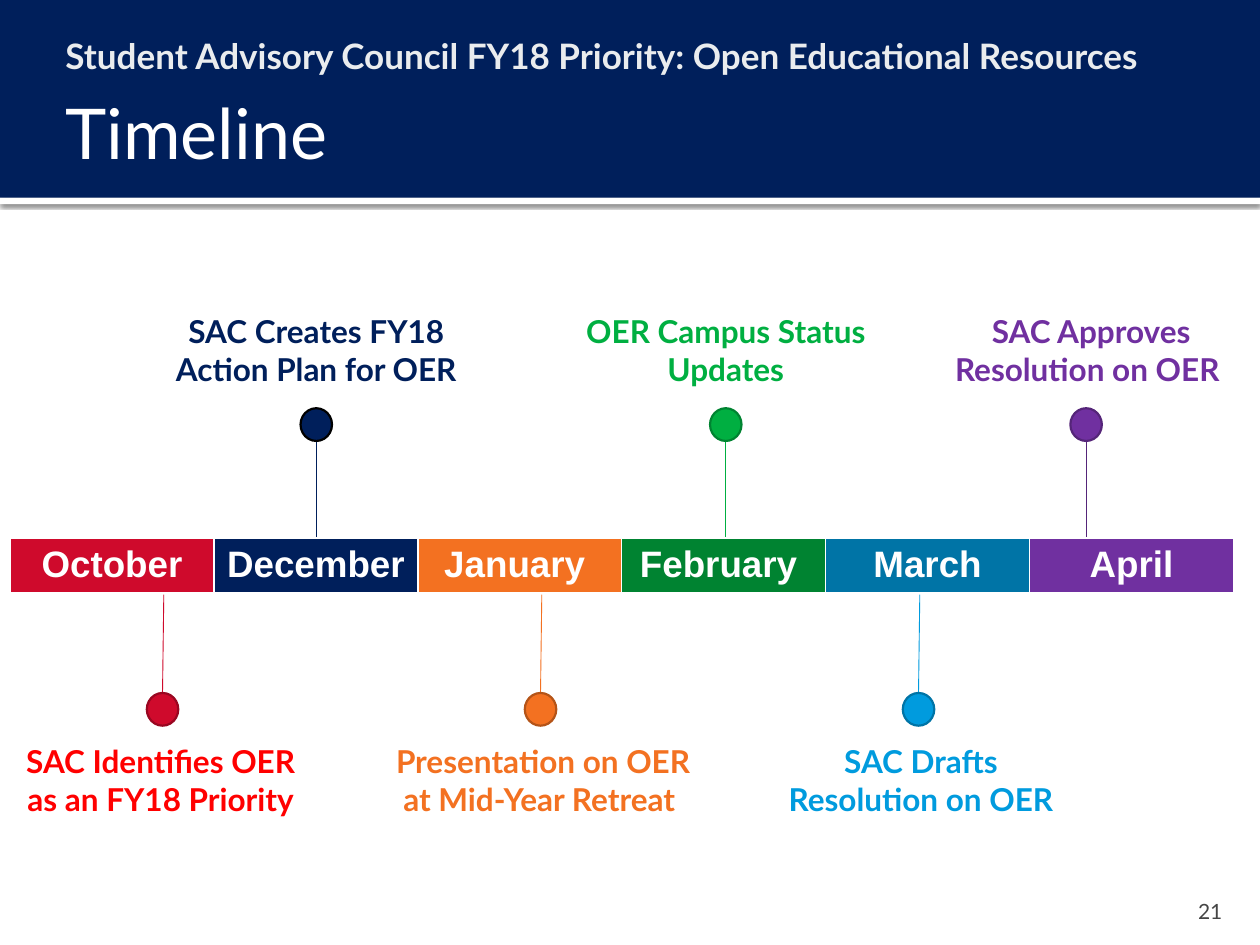
from lxml import etree
from pptx import Presentation
from pptx.dml.color import RGBColor
from pptx.enum.shapes import MSO_CONNECTOR, MSO_SHAPE
from pptx.enum.text import MSO_ANCHOR, MSO_AUTO_SIZE, PP_ALIGN
from pptx.oxml import parse_xml
from pptx.oxml.ns import nsdecls, qn
from pptx.util import Inches, Pt

RECT, OVAL = MSO_SHAPE.RECTANGLE, MSO_SHAPE.OVAL
STRAIGHT = MSO_CONNECTOR.STRAIGHT
LEFT, CENTER, RIGHT = PP_ALIGN.LEFT, PP_ALIGN.CENTER, PP_ALIGN.RIGHT
TOP, MIDDLE, BOTTOM = MSO_ANCHOR.TOP, MSO_ANCHOR.MIDDLE, MSO_ANCHOR.BOTTOM
NO_FIT = MSO_AUTO_SIZE.NONE

WHITE = RGBColor(0xFF, 0xFF, 0xFF)
BLACK = RGBColor(0x00, 0x00, 0x00)
PALE = RGBColor(0xEA, 0xEC, 0xEE)
GRAY = RGBColor(0x45, 0x45, 0x45)
NAVY = RGBColor(0x00, 0x1F, 0x5B)
RED = RGBColor(0xFF, 0x00, 0x00)
CRIMSON = RGBColor(0xCF, 0x0A, 0x2C)
DARK_CRIMSON = RGBColor(0x99, 0x07, 0x21)
ORANGE = RGBColor(0xF3, 0x71, 0x21)
DARK_ORANGE = RGBColor(0xB4, 0x54, 0x18)
GREEN = RGBColor(0x00, 0xAF, 0x41)
DARK_GREEN = RGBColor(0x00, 0x83, 0x31)
BLUE = RGBColor(0x00, 0x9B, 0xDE)
DARK_BLUE = RGBColor(0x00, 0x74, 0xA6)
PURPLE = RGBColor(0x70, 0x30, 0xA0)
DARK_PURPLE = RGBColor(0x55, 0x25, 0x79)

DOT_W, DOT_H = 0.25, 0.26
LABEL_H = 0.71
MONTHS = [("October", CRIMSON), ("December", NAVY), ("January ", ORANGE),
          ("February ", DARK_GREEN), ("March", DARK_BLUE), ("April", PURPLE)]
EVENTS_ABOVE = [
    ("SAC Creates FY18 Action Plan for OER", 2.51, 1.17, NAVY, NAVY, BLACK, NAVY),
    ("OER Campus Status Updates", 5.76, 4.42, GREEN, GREEN, DARK_GREEN, GREEN),
    ("SAC Approves Resolution on OER ", 8.62, 7.32, PURPLE, PURPLE, DARK_PURPLE,
     DARK_PURPLE),
]
EVENTS_BELOW = [
    ("SAC Identifies OER as an FY18 Priority", 1.3, 0, 2.55, RED, CRIMSON,
     DARK_CRIMSON, CRIMSON),
    ("Presentation on OER at Mid-Year Retreat ", 4.3, 2.95, 2.72, ORANGE, ORANGE,
     DARK_ORANGE, ORANGE),
    ("SAC Drafts Resolution on OER", 7.3, 6.08, 2.46, BLUE, BLUE, DARK_BLUE, BLUE),
]


def set_text(tf, text, size, color, align, bold=False, font="Lato"):
    p = tf.paragraphs[0]
    p.alignment = align
    r = p.add_run()
    r.text = text
    r.font.name, r.font.size, r.font.bold = font, Pt(size), bold
    r.font.color.rgb = color
    return p


def add_label(s, x, y, w, h, text, size, color, align, bold=False, anchor=TOP):
    tf = s.shapes.add_textbox(Inches(x), Inches(y), Inches(w), Inches(h)).text_frame
    tf.word_wrap = True
    tf.vertical_anchor = anchor
    set_text(tf, text, size, color, align, bold)


def add_filled(s, kind, x, y, w, h, fill, outline=None):
    sp = s.shapes.add_shape(kind, Inches(x), Inches(y), Inches(w), Inches(h))
    sp.shadow.inherit = False
    sp.fill.solid()
    sp.fill.fore_color.rgb = fill
    if outline is None:
        sp.line.fill.background()
    else:
        sp.line.color.rgb = outline
        sp.line.width = Pt(1.25)
    return sp


def format_placeholder(ph, x, y, w, h, insets, anchor):
    ph.left, ph.top, ph.width, ph.height = (Inches(v) for v in (x, y, w, h))
    tf = ph.text_frame
    tf.auto_size = NO_FIT
    tf.word_wrap = True
    tf.vertical_anchor = anchor
    tf.margin_left, tf.margin_top, tf.margin_right, tf.margin_bottom = (
        Inches(v) for v in insets)
    return tf


def add_header(s, w, h):
    strip = add_filled(s, RECT, 0, h, w, 0.05, WHITE)
    effects = strip._element.spPr.find(qn("a:effectLst"))
    effects.append(parse_xml(
        f'<a:outerShdw {nsdecls("a")} blurRad="{Pt(2.5)}" dist="{Pt(0.8)}" dir="5400000">'
        '<a:srgbClr val="000000"><a:alpha val="60000"/></a:srgbClr></a:outerShdw>'))
    band = add_filled(s, RECT, 0, 0, w, h, NAVY)
    for i, sp in enumerate((strip, band)):
        s.shapes._spTree.insert(2 + i, sp._element)

    tf = format_placeholder(s.placeholders[1], 0.33, 0.17, 9.34, 0.5,
                            (0.06, 0.1, 0.1, 0.05), TOP)
    p = set_text(tf, "Student Advisory Council FY18 Priority: Open Educational Resources",
                 20, PALE, LEFT, True)
    p.space_before = Pt(0)
    pPr = p._p.get_or_add_pPr()
    pPr.set("marL", str(Inches(0.13)))
    pPr.set("indent", "0")
    etree.SubElement(pPr, qn("a:buNone"))

    tf = format_placeholder(s.shapes.title, 0.42, 0.58, 9.17, 0.92,
                            (0.1, 0.05, 0.05, 0.05), MIDDLE)
    set_text(tf, "Timeline", 40, WHITE, LEFT)


def set_borders(cell):
    tcPr = cell._tc.get_or_add_tcPr()
    for i, (side, width) in enumerate((("L", 1), ("R", 1), ("T", 1), ("B", 3))):
        tcPr.insert(i, parse_xml(
            f'<a:ln{side} {nsdecls("a")} w="{Pt(width)}"><a:solidFill>'
            f'<a:srgbClr val="{WHITE}"/></a:solidFill></a:ln{side}>'))


def add_months(s, x, y, w, h):
    table = s.shapes.add_table(1, len(MONTHS), Inches(x), Inches(y),
                               Inches(w), Inches(h)).table
    table.horz_banding = False
    for cell, (month, color) in zip(table.rows[0].cells, MONTHS):
        cell.fill.solid()
        cell.fill.fore_color.rgb = color
        set_borders(cell)
        set_text(cell.text_frame, month, 21, WHITE, CENTER, True, "Arial")


def add_marker(s, x, bar_y, dot_y, stem_y, fill, outline, stem, lean=0):
    c = s.shapes.add_connector(STRAIGHT, Inches(x), Inches(bar_y),
                               Inches(x - lean), Inches(stem_y))
    c.line.color.rgb = stem
    c.line.width = Pt(0.5)
    etree.SubElement(c._element.spPr, qn("a:effectLst"))
    add_filled(s, OVAL, x - lean - DOT_W / 2, dot_y, DOT_W, DOT_H, fill, outline)


def add_events_above(s, y, bar_y):
    dot_y = y + 0.81
    for text, x, label_x, color, fill, outline, stem in EVENTS_ABOVE:
        add_marker(s, x, bar_y, dot_y, dot_y + DOT_H, fill, outline, stem)
        add_label(s, label_x, y, 2.68, LABEL_H, text, 18, color, CENTER, True)


def add_events_below(s, y, bar_y):
    dot_y = y - 0.34
    for text, x, label_x, w, color, fill, outline, stem in EVENTS_BELOW:
        add_marker(s, x, bar_y, dot_y, dot_y, fill, outline, stem, 0.01)
        add_label(s, label_x, y, w, LABEL_H, text, 18, color, CENTER, True)


def main():
    prs = Presentation()
    prs.slide_width, prs.slide_height = Inches(10), Inches(7.5)
    s = prs.slides.add_slide(prs.slide_layouts[1])
    add_header(s, 10, 1.57)
    add_months(s, 0.08, 4.27, 9.71, 0.45)
    add_events_above(s, 2.43, 4.26)
    add_events_below(s, 5.84, 4.72)
    add_label(s, 9, 7.08, 0.8, 0.3, "21", 12, GRAY, RIGHT, anchor=BOTTOM)
    prs.save("out.pptx")


if __name__ == "__main__":
    main()
